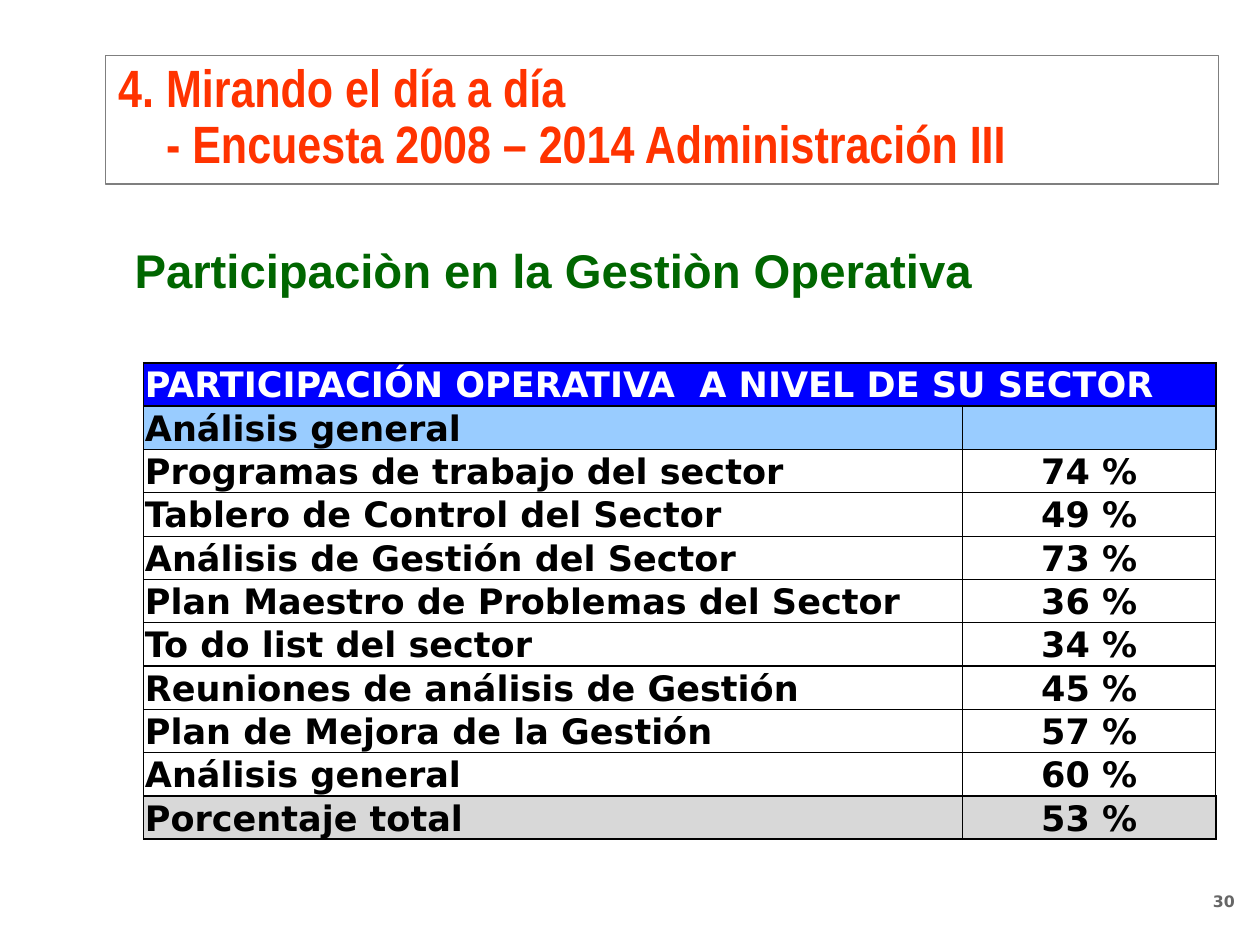
"""Build the survey slide on participation in operative management."""
from dataclasses import dataclass

from lxml import etree
from pptx import Presentation
from pptx.dml.color import RGBColor
from pptx.enum.shapes import MSO_SHAPE
from pptx.enum.text import MSO_ANCHOR, PP_ALIGN
from pptx.oxml.ns import qn
from pptx.util import Inches, Pt

LEFT, CENTER, RIGHT = PP_ALIGN.LEFT, PP_ALIGN.CENTER, PP_ALIGN.RIGHT
TOP, BOTTOM = MSO_ANCHOR.TOP, MSO_ANCHOR.BOTTOM
RECTANGLE = MSO_SHAPE.RECTANGLE

COLORS = {
    "title": "FF3300", "subtitle": "006600", "number": "666666",
    "frame": "7F7F7F", "black": "000000", "white": "FFFFFF",
    "header": "0000FF", "section": "99CCFF", "total": "D8D8D8",
}
GRID_COLUMNS, GRID_ROWS = 100, 75
UNIT = Inches(10) // GRID_COLUMNS
TABLE_LEFT, TABLE_TOP = 11.4, 28.8
TABLE_COLUMNS = (65, 20.1)
TABLE_ROW = 3.33


@dataclass(frozen=True)
class Style:
    font: str
    size: float
    color: str
    align: PP_ALIGN = LEFT
    spacing: float = 1.0


@dataclass(frozen=True)
class Panel:
    lines: tuple[str, ...]
    column: float
    row: float
    columns: float
    rows: float
    style: Style
    anchor: MSO_ANCHOR = TOP
    margins: tuple[float, float] = (0.1, 0.05)
    frame: str = ""
    hanging: float = 0


@dataclass(frozen=True)
class Row:
    topic: str
    share: str = ""
    fill: str = "white"
    color: str = "black"
    border: float = 0.75


PANELS = (
    Panel(("30",), 92.1, 70.8, 5.9, 1.5,
          Style("DejaVu Sans", 9, "number", RIGHT), margins=(0, 0)),
    Panel(("4. Mirando el día a día", "- Encuesta 2008 – 2014 Administración III"),
          8.4, 4.4, 88.3, 10.2, Style("Arial Narrow", 30, "title", spacing=0.9),
          frame="frame", hanging=3.8),
    Panel(("Participaciòn en la Gestiòn Operativa",), 9.7, 14, 88.3, 10.2,
          Style("Arial", 27, "subtitle", spacing=0.9), anchor=BOTTOM),
)
ROWS = (
    Row("PARTICIPACIÓN OPERATIVA  A NIVEL DE SU SECTOR", "", "header", "white", 1),
    Row("Análisis general", fill="section", border=1),
    Row("Programas de trabajo del sector", "74 %"),
    Row("Tablero de Control del Sector", "49 %"),
    Row("Análisis de Gestión del Sector", "73 %"),
    Row("Plan Maestro de Problemas del Sector", "36 %"),
    Row("To do list del sector", "34 %"),
    Row("Reuniones de análisis de Gestión", "45 %"),
    Row("Plan de Mejora de la Gestión", "57 %"),
    Row("Análisis general", "60 %"),
    Row("Porcentaje total", "53 %", "total", border=1),
)


def units(count: float) -> int:
    return round(count * UNIT)


def rgb(name: str) -> RGBColor:
    return RGBColor.from_string(COLORS[name])


def assign(target, values: dict) -> None:
    for attribute, value in values.items():
        setattr(target, attribute, value)


def write(paragraph, words: str, style: Style) -> None:
    assign(paragraph, {"alignment": style.align, "line_spacing": style.spacing})
    run = paragraph.add_run()
    run.text = words
    assign(run.font, {"name": style.font, "size": Pt(style.size), "bold": True})
    run.font.color.rgb = rgb(style.color)


def draw_panel(shapes, panel: Panel) -> None:
    place = [units(n) for n in (panel.column, panel.row, panel.columns, panel.rows)]
    if panel.frame:
        holder = shapes.add_shape(RECTANGLE, *place)
        holder.shadow.inherit = False
        holder.fill.background()
        holder.line.color.rgb = rgb(panel.frame)
        holder.line.width = Pt(0.75)
    else:
        holder = shapes.add_textbox(*place)
    side, edge = (Inches(margin) for margin in panel.margins)
    frame = holder.text_frame
    assign(frame, {"word_wrap": True, "vertical_anchor": panel.anchor,
                   "margin_left": side, "margin_right": side,
                   "margin_top": edge, "margin_bottom": edge})
    for index, line in enumerate(panel.lines):
        paragraph = frame.add_paragraph() if index else frame.paragraphs[0]
        write(paragraph, line, panel.style)
        if index:
            paragraph._p.get_or_add_pPr().set("marL", str(units(panel.hanging)))


def draw_borders(cell, points: float) -> None:
    properties = cell._tc.get_or_add_tcPr()
    for side in ("lnL", "lnR", "lnT", "lnB"):
        line = etree.SubElement(properties, qn(f"a:{side}"), w=str(Pt(points)))
        fill = etree.SubElement(line, qn("a:solidFill"))
        etree.SubElement(fill, qn("a:srgbClr"), val=COLORS["black"])


def draw_cell(cell, words: str, row: Row, align: PP_ALIGN) -> None:
    draw_borders(cell, row.border)
    cell.fill.solid()
    cell.fill.fore_color.rgb = rgb(row.fill)
    hair = Inches(0.01)
    assign(cell, {"vertical_anchor": BOTTOM, "margin_left": hair,
                  "margin_right": hair, "margin_top": hair, "margin_bottom": 0})
    write(cell.text_frame.paragraphs[0], words,
          Style("DejaVu Sans", 20, row.color, align))


def draw_table(shapes, rows: tuple[Row, ...]) -> None:
    table = shapes.add_table(
        len(rows), len(TABLE_COLUMNS), units(TABLE_LEFT), units(TABLE_TOP),
        units(sum(TABLE_COLUMNS)), units(TABLE_ROW * len(rows))).table
    assign(table, {"first_row": False, "horz_banding": False})
    for column, width in zip(table.columns, TABLE_COLUMNS):
        column.width = units(width)
    for index, row in enumerate(rows):
        table.rows[index].height = units(TABLE_ROW)
        draw_cell(table.cell(index, 0), row.topic, row, LEFT)
        draw_cell(table.cell(index, 1), row.share, row, CENTER)
    table.cell(0, 0).merge(table.cell(0, 1))


def main() -> None:
    deck = Presentation()
    assign(deck, {"slide_width": units(GRID_COLUMNS), "slide_height": units(GRID_ROWS)})
    shapes = deck.slides.add_slide(deck.slide_layouts[6]).shapes
    number, title, subtitle = PANELS
    draw_panel(shapes, number)
    draw_table(shapes, ROWS)
    draw_panel(shapes, title)
    draw_panel(shapes, subtitle)
    deck.save("out.pptx")


if __name__ == "__main__":
    main()
